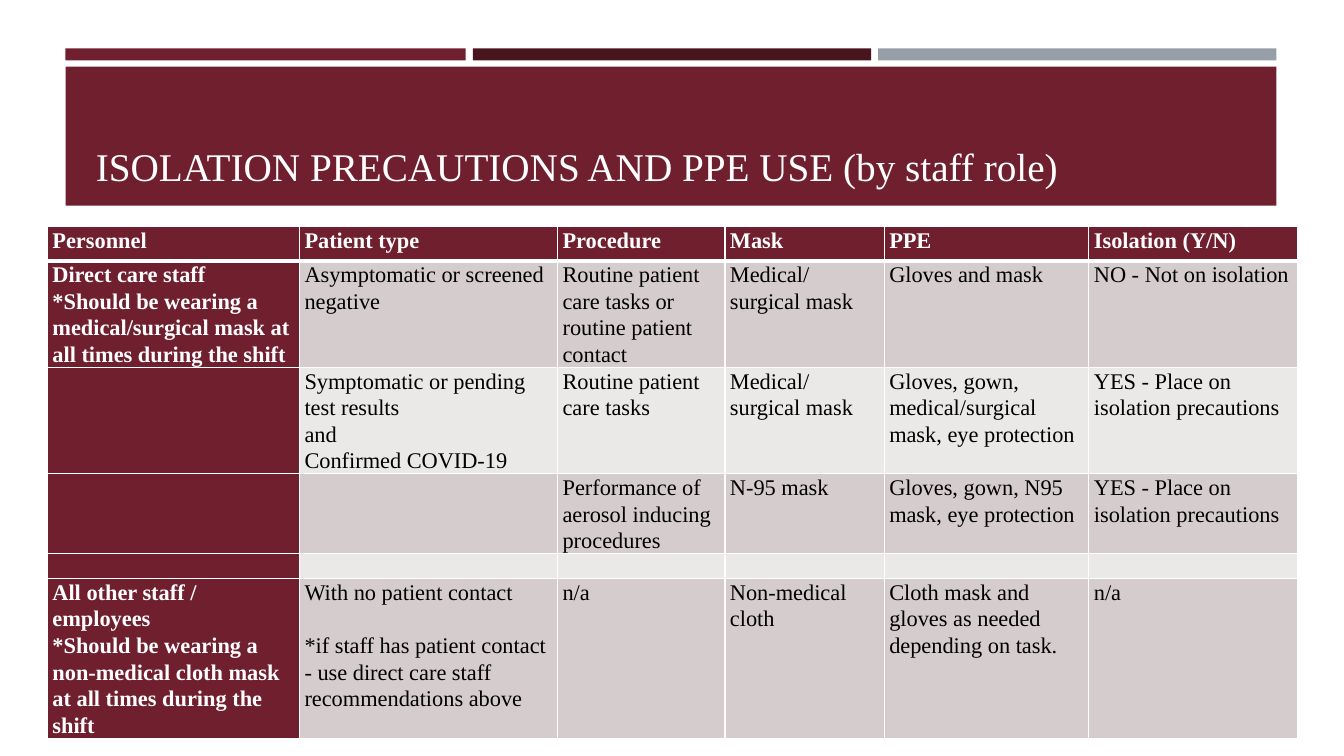
import pptx
import pptx.dml.color
import pptx.enum.shapes
import pptx.enum.text
import pptx.oxml
import pptx.oxml.ns
import pptx.util
from lxml import etree

Inches = pptx.util.Inches
Pt = pptx.util.Pt
RGBColor = pptx.dml.color.RGBColor
ALIGN = pptx.enum.text.PP_ALIGN
ANCHOR = pptx.enum.text.MSO_ANCHOR

WINE = RGBColor(0x6F, 0x1F, 0x2E)
DARK = RGBColor(0x48, 0x14, 0x1E)
GREY = RGBColor(0x96, 0x9F, 0xA7)
ROSE = RGBColor(0xD5, 0xCD, 0xCD)
PALE = RGBColor(0xEB, 0xE8, 0xE8)
WHITE = RGBColor(0xFF, 0xFF, 0xFF)
BLACK = RGBColor(0x00, 0x00, 0x00)

TITLE = "ISOLATION PRECAUTIONS AND PPE USE (by staff role)"
BARS = [
    (0.65, 0.48, 3.97, 0.12, WINE),
    (4.69, 0.48, 3.95, 0.12, DARK),
    (8.71, 0.48, 3.95, 0.12, GREY),
    (0.65, 0.66, 12.01, 1.38, WINE),
]
WIDTHS = [2.5, 2.56, 1.66, 1.58, 2.03, 2.07]
HEIGHTS = [0.34, 1.04, 1.04, 0.69, 0.17, 1.56]
MASK = "Medical/surgical mask"
PLACE = "YES - Place on isolation precautions"
ROWS = [
    ["Personnel", "Patient type", "Procedure", "Mask", "PPE", "Isolation (Y/N)"],
    ["Direct care staff\n*Should be wearing a medical/surgical mask at all times "
     "during the shift",
     "Asymptomatic or screened negative",
     "Routine patient care tasks or routine patient contact",
     MASK, "Gloves and mask", "NO - Not on isolation"],
    ["", "Symptomatic or pending test results\nand\nConfirmed COVID-19",
     "Routine patient care tasks", MASK,
     "Gloves, gown, medical/surgical mask, eye protection", PLACE],
    ["", "", "Performance of aerosol inducing procedures", "N-95 mask",
     "Gloves, gown, N95 mask, eye protection", PLACE],
    [""] * 6,
    ["All other staff / employees\n*Should be wearing a non-medical cloth mask "
     "at all times during the shift",
     "With no patient contact\n*if staff has patient contact - use direct care "
     "staff recommendations above",
     "n/a", "Non-medical cloth",
     "Cloth mask and gloves as needed depending on task.", "n/a"],
]


class Deck:
    def __init__(self, font):
        self.font = font
        self.prs = pptx.Presentation()
        self.prs.slide_width = Inches(13.33)
        self.prs.slide_height = Inches(7.5)
        self.slide = self.prs.slides.add_slide(self.prs.slide_layouts[5])

    def text(self, frame, text, size=16, color=BLACK, bold=False, line=None):
        """Fill a text frame, one paragraph for each line of text."""
        frame.word_wrap = True
        for i, words in enumerate(text.split("\n")):
            para = frame.paragraphs[0] if i == 0 else frame.add_paragraph()
            para.alignment = ALIGN.LEFT
            if line:
                para.line_spacing = line
            if not words:
                # An empty cell takes its line height from the end mark.
                end = etree.SubElement(para._p, pptx.oxml.ns.qn("a:endParaRPr"))
                end.set("sz", str(size * 100))
                face = etree.SubElement(end, pptx.oxml.ns.qn("a:latin"))
                face.set("typeface", self.font)
                continue
            run = para.add_run()
            run.text = words
            run.font.name = self.font
            run.font.size = Pt(size)
            run.font.bold = bold
            run.font.color.rgb = color

    def bar(self, left, top, width, height, color):
        shape = self.slide.shapes.add_shape(
            pptx.enum.shapes.MSO_SHAPE.RECTANGLE,
            Inches(left), Inches(top), Inches(width), Inches(height))
        shape.shadow.inherit = False
        shape.fill.solid()
        shape.fill.fore_color.rgb = color
        shape.line.fill.background()

    def title(self, text, left, top, width, height):
        shape = self.slide.shapes.title
        shape.left, shape.top = Inches(left), Inches(top)
        shape.width, shape.height = Inches(width), Inches(height)
        frame = shape.text_frame
        frame.auto_size = pptx.enum.text.MSO_AUTO_SIZE.NONE
        frame.vertical_anchor = ANCHOR.BOTTOM
        self.text(frame, text, size=28, color=WHITE)
        # Bring the title in front of the bars.
        self.slide.shapes._spTree.append(shape._element)

    def edge(self, cell, side, width):
        line = etree.SubElement(cell._tc.get_or_add_tcPr(),
                                pptx.oxml.ns.qn("a:ln" + side))
        line.set("w", str(Pt(width)))
        fill = etree.SubElement(line, pptx.oxml.ns.qn("a:solidFill"))
        tint = etree.SubElement(fill, pptx.oxml.ns.qn("a:srgbClr"))
        tint.set("val", str(WHITE))

    def cell(self, cell, text, row, col):
        head = row == 0 or col == 0
        cell.margin_left = cell.margin_right = Inches(0.05)
        cell.margin_top = cell.margin_bottom = 0
        cell.vertical_anchor = ANCHOR.TOP
        thick = {(0, "B"), (1, "T")}
        for side in "LRTB":
            self.edge(cell, side, 3 if (row, side) in thick else 1)
        cell.fill.solid()
        cell.fill.fore_color.rgb = WINE if head else ROSE if row % 2 else PALE
        self.text(cell.text_frame, text, color=WHITE if head else BLACK,
                  bold=head, line=1.07)

    def table(self, rows, left, top, widths, heights):
        table = self.slide.shapes.add_table(
            len(rows), len(widths), Inches(left), Inches(top),
            Inches(sum(widths)), Inches(sum(heights))).table
        for col, width in zip(table.columns, widths):
            col.width = Inches(width)
        for row, height in zip(table.rows, heights):
            row.height = Inches(height)
        for r, texts in enumerate(rows):
            for c, text in enumerate(texts):
                self.cell(table.cell(r, c), text, r, c)
        return table


def main():
    deck = Deck("Times New Roman")
    for bar in BARS:
        deck.bar(*bar)
    deck.title(TITLE, 0.85, 0.75, 11.65, 1.18)
    table = deck.table(ROWS, 0.47, 2.25, WIDTHS, HEIGHTS)
    note = table.cell(5, 1).text_frame.paragraphs[1]
    note.space_before = Pt(19)
    deck.prs.save("out.pptx")


if __name__ == "__main__":
    main()
